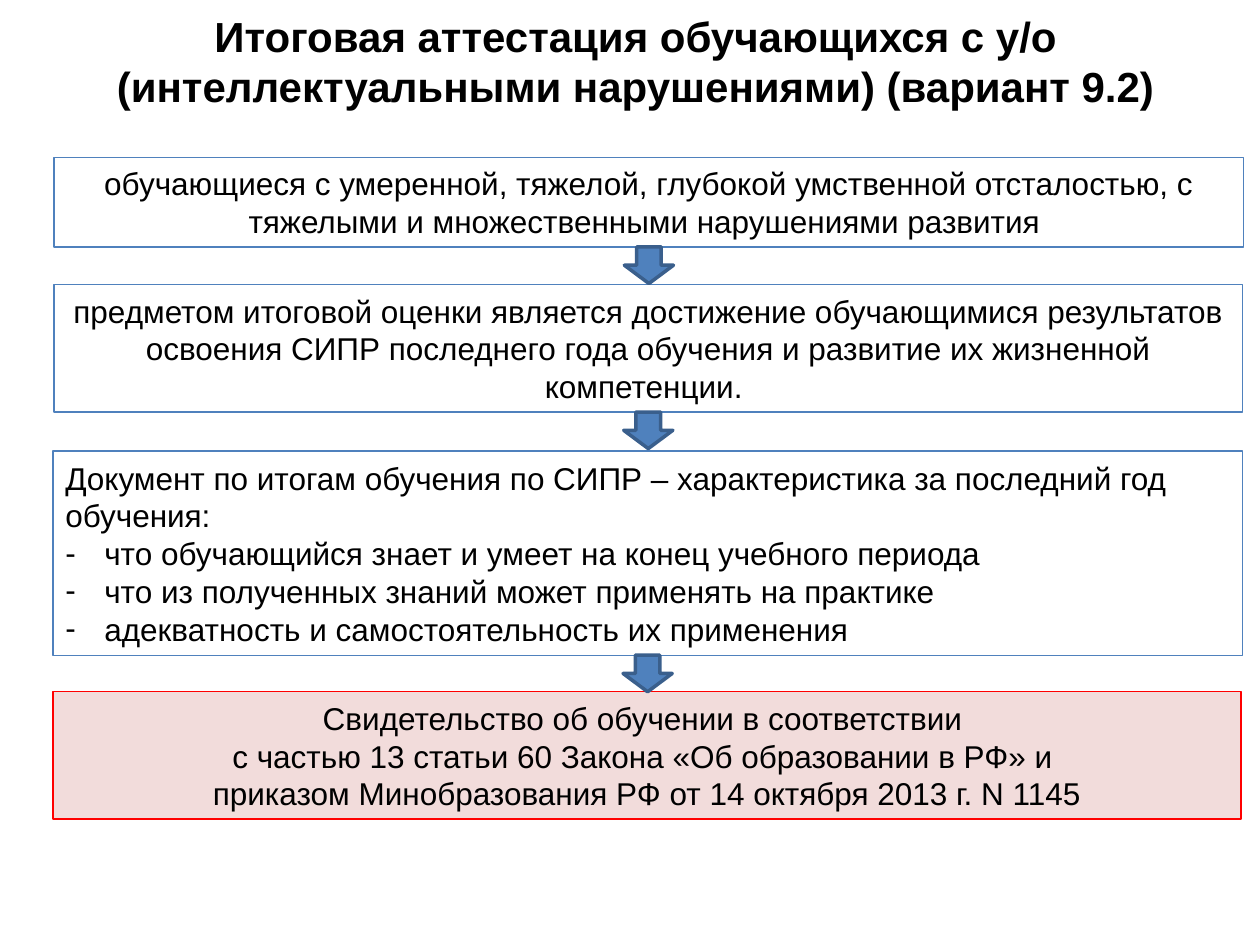
from lxml.etree import SubElement
from pptx import Presentation
from pptx.dml.color import RGBColor
from pptx.enum.shapes import MSO_SHAPE
from pptx.enum.text import MSO_ANCHOR, MSO_AUTO_SIZE, PP_ALIGN
from pptx.oxml.ns import qn
from pptx.util import Inches, Pt

# Content
TITLE = "Итоговая аттестация обучающихся с у/о (интеллектуальными нарушениями) (вариант 9.2)"
BLUE, DARK_BLUE, RED, PINK, BLACK = "4F81BD", "3A5F8C", "FF0000", "F2DCDB", "000000"
# Each stage: left, top, width, height, fill, line, centred paragraphs or intro with bullets
STAGES = [
    dict(box=(0.43, 1.25, 9.44, 0.71), fill=None, line=BLUE, centred=[
        "обучающиеся с умеренной, тяжелой, глубокой умственной отсталостью, "
        "с тяжелыми и множественными нарушениями развития "]),
    dict(box=(0.43, 2.26, 9.43, 1.01), fill=None, line=BLUE, centred=[
        "предметом итоговой оценки является достижение обучающимися результатов "
        "освоения СИПР последнего года обучения и развитие их жизненной компетенции. "]),
    dict(box=(0.42, 3.58, 9.44, 1.62), fill=None, line=BLUE, intro=[
        "Документ по итогам обучения по СИПР – характеристика за последний год обучения:"],
        bullets=["что обучающийся знает и умеет на конец учебного периода",
                 "что из полученных знаний может применять на практике",
                 "адекватность и самостоятельность их применения"]),
    dict(box=(0.42, 5.49, 9.43, 1.01), fill=PINK, line=RED, centred=[
        "Свидетельство об обучении в соответствии ",
        "с частью 13 статьи 60 Закона «Об образовании в РФ» и ",
        "приказом Минобразования РФ от 14 октября 2013 г. N 1145"]),
]
ARROW_WIDTH, ARROW_HEIGHT = 0.39, 0.29
BULLET_INDENT = 0.31


def color(hex_string):
    return RGBColor.from_string(hex_string)


def add_run(paragraph, text, size, bold=False):
    run = paragraph.add_run()
    run.text = text
    run.font.name, run.font.size, run.font.bold = "Arial", Pt(size), bold
    run.font.color.rgb = color(BLACK)


def add_bullet(paragraph):
    properties = paragraph._p.get_or_add_pPr()
    properties.set("marL", str(Inches(BULLET_INDENT)))
    properties.set("indent", str(-Inches(BULLET_INDENT)))
    SubElement(properties, qn("a:buFont")).set("typeface", "Arial")
    SubElement(properties, qn("a:buChar")).set("char", "-")


def add_shape(slide, preset, box, fill, line, line_width):
    shape = slide.shapes.add_shape(preset, *map(Inches, box))
    shape.shadow.inherit = False
    if fill:
        shape.fill.solid()
        shape.fill.fore_color.rgb = color(fill)
    else:
        shape.fill.background()
    shape.line.color.rgb = color(line)
    shape.line.width = Pt(line_width)
    return shape


def add_stage(slide, stage):
    shape = add_shape(slide, MSO_SHAPE.RECTANGLE, stage["box"], stage["fill"], stage["line"], 0.75)
    frame = shape.text_frame
    frame.word_wrap = True
    lines = [(kind, text) for kind in ("centred", "intro", "bullets")
             for text in stage.get(kind, [])]
    for index, (kind, text) in enumerate(lines):
        paragraph = frame.add_paragraph() if index else frame.paragraphs[0]
        paragraph.alignment = PP_ALIGN.CENTER if kind == "centred" else PP_ALIGN.LEFT
        if kind == "bullets":
            add_bullet(paragraph)
        add_run(paragraph, text, 18)


def add_arrow_below(slide, stage):
    left, top, width, height = stage["box"]
    box = (left + (width - ARROW_WIDTH) / 2, top + height, ARROW_WIDTH, ARROW_HEIGHT)
    add_shape(slide, MSO_SHAPE.DOWN_ARROW, box, BLUE, DARK_BLUE, 2)


def main():
    presentation = Presentation()
    presentation.slide_width, presentation.slide_height = Inches(10), Inches(7.5)
    slide = presentation.slides.add_slide(presentation.slide_layouts[5])

    # Title
    title = slide.shapes.title
    title.left, title.top, title.width, title.height = map(Inches, (0.2, 0.03, 9.69, 0.91))
    frame = title.text_frame
    frame.word_wrap = True
    frame.auto_size = MSO_AUTO_SIZE.NONE
    frame.vertical_anchor = MSO_ANCHOR.TOP
    frame.paragraphs[0].alignment = PP_ALIGN.CENTER
    add_run(frame.paragraphs[0], TITLE, 24, bold=True)

    # Stages, then the arrows that lead from each to the next
    for stage in STAGES:
        add_stage(slide, stage)
    for stage in STAGES[:-1]:
        add_arrow_below(slide, stage)

    presentation.save("out.pptx")


if __name__ == "__main__":
    main()
